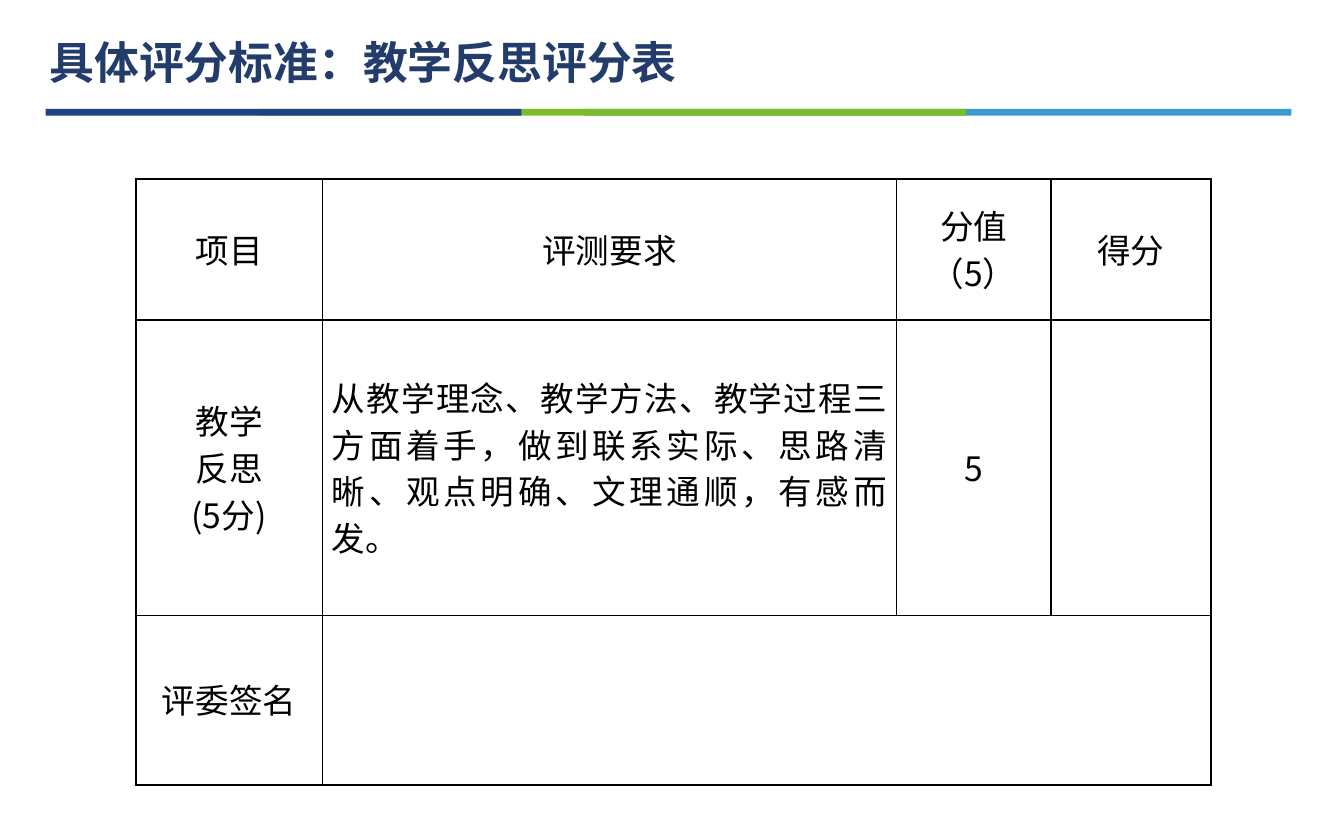
import pptx
import pptx.dml.color
import pptx.enum.shapes
import pptx.enum.text
import pptx.oxml
import pptx.oxml.ns
import pptx.util

Inches = pptx.util.Inches
Pt = pptx.util.Pt
ALIGN = pptx.enum.text.PP_ALIGN
MIDDLE = pptx.enum.text.MSO_ANCHOR.MIDDLE

# Content
TITLE = "具体评分标准：教学反思评分表"
ROWS = [
    ["项目", "评测要求", "分值（5）", "得分"],
    ["教学\n反思\n(5分)",
     "从教学理念、教学方法、教学过程三方面着手，做到联系实际、思路清晰、观点明确、文理通顺，有感而发。",
     "5", ""],
    ["评委签名", "", "", ""],
]
JUSTIFIED_CELL = (1, 1)
SIGNATURE_SPAN = ((2, 1), (2, 3))

THEME = {
    "font": "Noto Sans CJK SC",
    "title_size": 24, "title_color": "223C6C",
    "cell_size": 18, "cell_color": "000000", "cell_leading": 25,
    "border_color": "000000", "border_width": 1,
}

# Geometry in inches; rule bars overlap, so they run from back to front
RULE_TOP, RULE_HEIGHT = 0.81, 0.05
RULE_BARS = [(4.35, 5.26, "389BCC"), (1.93, 5.26, "7BBC28"), (0.34, 3.54, "1E4380")]
TABLE_LEFT, TABLE_TOP = 1.01, 1.33
COLUMN_WIDTHS = [1.39, 4.27, 1.15, 1.19]
ROW_HEIGHTS = [1.05, 2.2, 1.26]
CELL_MARGIN = 0.07


def color(name):
    return pptx.dml.color.RGBColor.from_string(name)


def add_run(paragraph, text, size, text_color, bold=False):
    run = paragraph.add_run()
    run.text = text
    run.font.name = THEME["font"]
    run.font.size = Pt(size)
    run.font.bold = bold
    run.font.color.rgb = color(text_color)
    east_asian = pptx.oxml.parse_xml(
        f'<a:ea {pptx.oxml.ns.nsdecls("a")} typeface="{THEME["font"]}"/>')
    run.font._element.find(pptx.oxml.ns.qn("a:latin")).addnext(east_asian)


def add_borders(cell):
    properties = cell._tc.get_or_add_tcPr()
    for index, side in enumerate(("lnL", "lnR", "lnT", "lnB")):
        properties.insert(index, pptx.oxml.parse_xml(
            f'<a:{side} {pptx.oxml.ns.nsdecls("a")} w="{Pt(THEME["border_width"])}">'
            f'<a:solidFill><a:srgbClr val="{THEME["border_color"]}"/></a:solidFill>'
            f'</a:{side}>'))


def fill_cell(cell, text, alignment):
    cell.fill.background()
    add_borders(cell)
    cell.vertical_anchor = MIDDLE
    cell.margin_left = cell.margin_right = Inches(CELL_MARGIN)
    cell.margin_top = cell.margin_bottom = 0
    if not text:
        return
    for index, line in enumerate(text.split("\n")):
        frame = cell.text_frame
        paragraph = frame.add_paragraph() if index else frame.paragraphs[0]
        paragraph.alignment = alignment
        paragraph.line_spacing = Pt(THEME["cell_leading"])
        # Keep punctuation inside the cell margin
        paragraph._p.get_or_add_pPr().set("hangingPunct", "0")
        add_run(paragraph, line, THEME["cell_size"], THEME["cell_color"])


def add_rule(slide):
    for left, width, bar_color in RULE_BARS:
        bar = slide.shapes.add_shape(
            pptx.enum.shapes.MSO_SHAPE.RECTANGLE, Inches(left), Inches(RULE_TOP),
            Inches(width), Inches(RULE_HEIGHT))
        bar.shadow.inherit = False
        bar.fill.solid()
        bar.fill.fore_color.rgb = color(bar_color)
        bar.line.fill.background()


def add_title(slide):
    box = slide.shapes.add_textbox(Inches(0.27), Inches(0.21), Inches(4.91), Inches(0.5))
    box.text_frame.word_wrap = False
    box.text_frame.auto_size = pptx.enum.text.MSO_AUTO_SIZE.SHAPE_TO_FIT_TEXT
    add_run(box.text_frame.paragraphs[0], TITLE,
            THEME["title_size"], THEME["title_color"], bold=True)


def add_score_table(slide):
    table = slide.shapes.add_table(
        len(ROWS), len(COLUMN_WIDTHS), Inches(TABLE_LEFT), Inches(TABLE_TOP),
        Inches(sum(COLUMN_WIDTHS)), Inches(sum(ROW_HEIGHTS))).table
    table.first_row = table.horz_banding = False
    for column, width in zip(table.columns, COLUMN_WIDTHS):
        column.width = Inches(width)
    for row, height in zip(table.rows, ROW_HEIGHTS):
        row.height = Inches(height)
    for row_index, texts in enumerate(ROWS):
        for column_index, text in enumerate(texts):
            justified = (row_index, column_index) == JUSTIFIED_CELL
            fill_cell(table.cell(row_index, column_index), text,
                      ALIGN.JUSTIFY if justified else ALIGN.CENTER)
    first, last = SIGNATURE_SPAN
    table.cell(*first).merge(table.cell(*last))


def main():
    presentation = pptx.Presentation()
    presentation.slide_width = Inches(10)
    presentation.slide_height = Inches(6.25)
    slide = presentation.slides.add_slide(presentation.slide_layouts[6])
    add_rule(slide)
    add_title(slide)
    add_score_table(slide)
    presentation.save("out.pptx")


if __name__ == "__main__":
    main()
